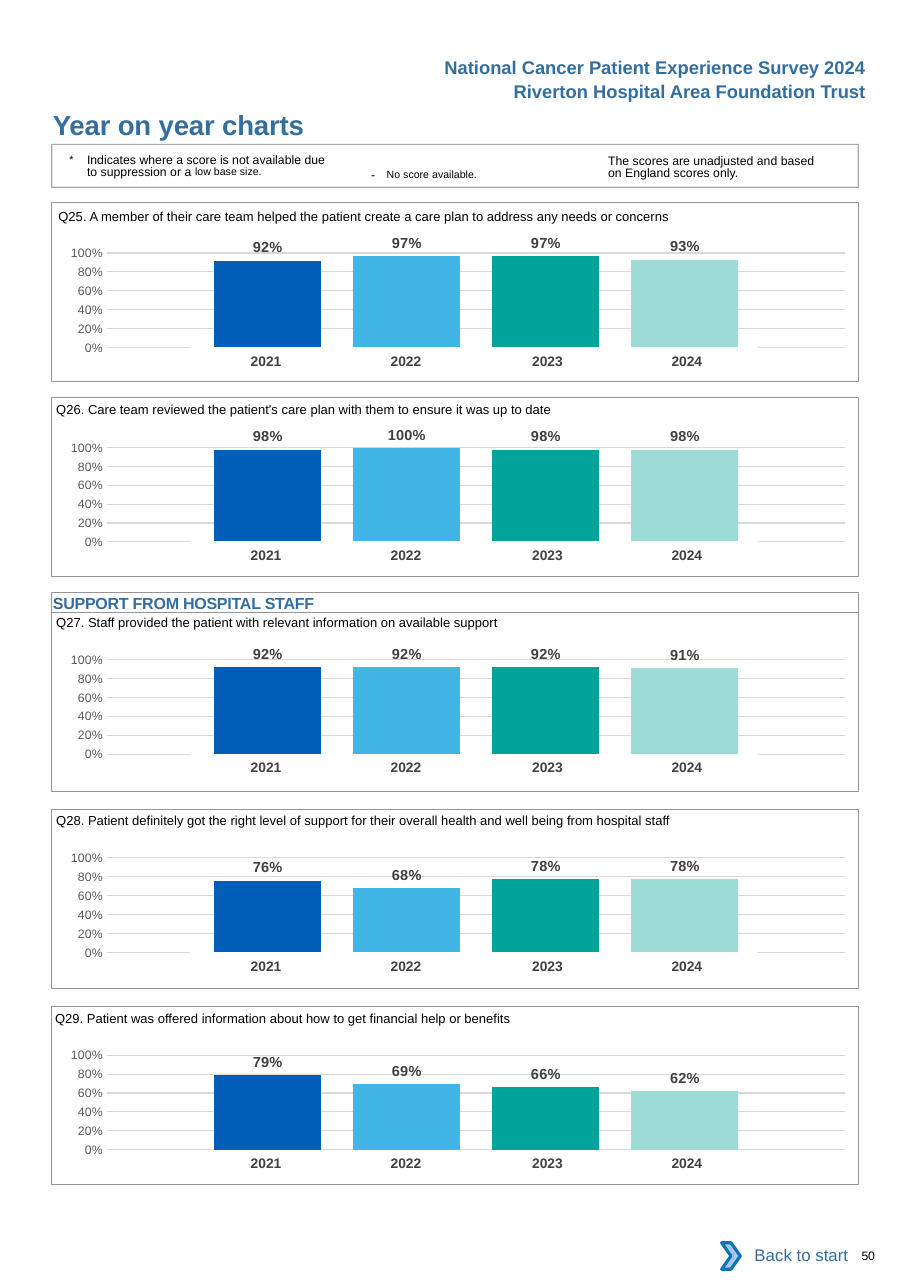
from pptx import Presentation
from pptx import util as u
from pptx.chart.data import CategoryChartData
from pptx.dml.color import RGBColor
from pptx.enum import chart as charts, shapes, text
from pptx.oxml import parse_xml
from pptx.oxml.ns import nsdecls, qn

PX = 9144  # 100 px to the inch
BLUE, GREY, BLACK = "336E9F", "939598", "000000"
LEFT, RIGHT = text.PP_ALIGN.LEFT, text.PP_ALIGN.RIGHT

YEARS = {"2021": "005EB8", "2022": "41B6E6", "2023": "00A499", "2024": "9CDCD7"}
YEAR_COLUMNS = [(127, 0), (127, 0), (134, 4), (127, 12)]  # width, right inset

# panel top, chart top, question left and top, question, scores
PANELS = [
    (184, 211, 53, 180, "Q25. A member of their care team helped the patient create a care plan "
     "to address any needs or concerns", (0.92, 0.97, 0.97, 0.93)),
    (361, 387, 51, 355, "Q26. Care team reviewed the patient's care plan with them to ensure "
     "it was up to date", (0.98, 1, 0.98, 0.98)),
    (556, 580, 51, 549, "Q27. Staff provided the patient with relevant information on available "
     "support", (0.92, 0.92, 0.92, 0.91)),
    (735, 760, 51, 728, "Q28. Patient definitely got the right level of support for their overall "
     "health and well being from hospital staff", (0.76, 0.68, 0.78, 0.78)),
    (913, 939, 50, 908, "Q29. Patient was offered information about how to get financial help "
     "or benefits", (0.79, 0.69, 0.66, 0.62)),
]
PANEL_LEFT, PANEL_WIDTH, PANEL_HEIGHT = 47, 732, 162
CHART_LEFT, CHART_HEIGHT = 39, 129
YEARS_LEFT, YEARS_DROP, YEARS_HEIGHT = 173, 105, 27

# box, text, size, bold, colour, alignment, letter spacing in 1/100 pt
LINES = [
    ((392, 51, 394, 20), "National Cancer Patient Experience Survey 2024", 12, True, BLUE, RIGHT, 0),
    ((448, 73, 338, 20), "Riverton Hospital Area Foundation Trust", 12, True, BLUE, RIGHT, 0),
    ((48, 98, 450, 30), "Year on year charts", 18, True, BLUE, LEFT, -10),
    ((48, 539, 731, 17), "SUPPORT FROM HOSPITAL STAFF", 10.5, True, BLUE, LEFT, -15),
    ((662, 1130, 108, 20), "Back to start", 11, False, BLUE, RIGHT, 0),
    ((782, 1133, 41, 13), "50", 8, False, BLACK, LEFT, -20),
]

# box, line spacing in pt, hanging indent, runs of (text, size, baseline in 1/1000 %, letter spacing)
NOTES = [
    ((63, 141, 238, 24), 8.1, 16, [
        ("*\t", 12, 3000, 0),
        ("Indicates where a score is not available due to suppression or a ", 8, 0, 0),
        ("low base size.", 12, 7000, 0)]),
    ((337, 146, 163, 19), None, 0, [
        ("- ", 8, 0, 260), ("No score available.", 12, 3000, 0)]),
    ((552, 141, 198, 24), 8.1, 0, [
        ("The scores are unadjusted and based on England scores only.", 8, 0, 0)]),
]


def px(*lengths):
    return [length * PX for length in lengths]


def rgb(colour):
    return RGBColor.from_string(colour)


def set_font(font, size, colour, bold=False):
    font.name, font.size, font.bold = "Arial", u.Pt(size), bold
    font.color.rgb = rgb(colour)


def add_text_frame(slide, box):
    frame = slide.shapes.add_textbox(*px(*box)).text_frame
    frame.word_wrap = True
    frame.margin_left = frame.margin_top = frame.margin_right = frame.margin_bottom = 0
    return frame


def add_run(paragraph, words, baseline=0, spacing=0):
    run = paragraph.add_run()
    run.text = words
    properties = run._r.get_or_add_rPr()
    if spacing:
        properties.set("spc", str(spacing))
    if baseline:
        properties.set("baseline", str(baseline))
    return run


def add_line(slide, box, words, size, bold=False, colour=BLACK, alignment=LEFT, spacing=0):
    paragraph = add_text_frame(slide, box).paragraphs[0]
    paragraph.alignment = alignment
    set_font(paragraph.font, size, colour, bold)
    add_run(paragraph, words, spacing=spacing)


def add_note(slide, box, line_spacing, hanging, runs):
    paragraph = add_text_frame(slide, box).paragraphs[0]
    if line_spacing:
        paragraph.line_spacing = u.Pt(line_spacing)
    if hanging:
        properties = paragraph._p.get_or_add_pPr()
        properties.set("marL", str(hanging * PX))
        properties.set("indent", str(-hanging * PX))
    for words, size, baseline, spacing in runs:
        set_font(add_run(paragraph, words, baseline, spacing).font, size, BLACK)


def add_outline(slide, box, kind=shapes.MSO_SHAPE.RECTANGLE, fill=None, line=GREY, width=0.5):
    shape = slide.shapes.add_shape(kind, *px(*box))
    shape.shadow.inherit = False
    if fill:
        shape.fill.solid()
        shape.fill.fore_color.rgb = rgb(fill)
    else:
        shape.fill.background()
    shape.line.color.rgb = rgb(line)
    shape.line.width = u.Pt(width)
    return shape


def add_score_chart(slide, top, scores):
    data = CategoryChartData(number_format="0%")
    data.categories = ["1"]
    for number, score in enumerate(scores, 1):
        data.add_series(f"Series {number}", [score])
    chart = slide.shapes.add_chart(charts.XL_CHART_TYPE.COLUMN_CLUSTERED,
                                   *px(CHART_LEFT, top, PANEL_WIDTH, CHART_HEIGHT), data).chart
    chart.has_legend = chart.has_title = False
    chart.font.name, chart.font.size = "Calibri", u.Pt(10)
    chart.category_axis.visible = False

    axis = chart.value_axis
    axis.minimum_scale, axis.maximum_scale, axis.major_unit = 0, 1, 0.2
    axis.major_tick_mark = axis.minor_tick_mark = charts.XL_TICK_MARK.NONE
    axis.format.line.fill.background()
    axis.major_gridlines.format.line.color.rgb = rgb("D9D9D9")
    axis.major_gridlines.format.line.width = u.Pt(0.75)
    axis.tick_labels.number_format, axis.tick_labels.number_format_is_linked = "0%", False
    set_font(axis.tick_labels.font, 8, "595959")

    plot = chart.plots[0]
    plot.gap_width, plot.overlap, plot.vary_by_categories = 200, -30, False
    for series, colour in zip(plot.series, YEARS.values()):
        series.format.fill.solid()
        series.format.fill.fore_color.rgb = rgb(colour)
        labels = series.data_labels
        labels.show_value = True
        labels.position = charts.XL_LABEL_POSITION.OUTSIDE_END
        labels.number_format, labels.number_format_is_linked = "0%", False
        set_font(labels.font, 9.5, "404040", True)
    place_plot(chart, x=0.08, y=0.145, w=0.915, h=0.666)


def place_plot(chart, **fractions):
    """Fix the inner plot area as fractions of the chart's size."""
    area = chart._chartSpace.chart.plotArea
    for layout in area.findall(qn("c:layout")):
        area.remove(layout)
    modes = '<c:layoutTarget val="inner"/><c:xMode val="edge"/><c:yMode val="edge"/>'
    sizes = "".join(f'<c:{name} val="{value}"/>' for name, value in fractions.items())
    area.insert(0, parse_xml(f'<c:layout {nsdecls("c")}><c:manualLayout>{modes}{sizes}'
                             '</c:manualLayout></c:layout>'))


def add_year_table(slide, top):
    width = sum(column for column, _ in YEAR_COLUMNS)
    table = slide.shapes.add_table(1, len(YEARS), *px(YEARS_LEFT, top, width, YEARS_HEIGHT)).table
    table.first_row = table.horz_banding = False
    for index, (year, (column, inset)) in enumerate(zip(YEARS, YEAR_COLUMNS)):
        table.columns[index].width = column * PX
        cell = table.cell(0, index)
        cell.fill.background()
        cell.margin_left, cell.margin_right = px(10, inset)
        cell.margin_top = cell.margin_bottom = 5 * PX
        cell.text = year
        paragraph = cell.text_frame.paragraphs[0]
        paragraph.alignment = text.PP_ALIGN.CENTER
        set_font(paragraph.font, 9, "414042", True)


def main():
    presentation = Presentation()
    presentation.slide_width, presentation.slide_height = px(826, 1169)
    slide = presentation.slides.add_slide(presentation.slide_layouts[6])

    for panel_top, chart_top, left, top, question, scores in PANELS:
        add_score_chart(slide, chart_top, scores)
        add_year_table(slide, chart_top + YEARS_DROP)
        add_outline(slide, (PANEL_LEFT, panel_top, PANEL_WIDTH, PANEL_HEIGHT))
        add_line(slide, (left, top + 9, PANEL_WIDTH - 10, 15), question, 8.5)

    add_outline(slide, (PANEL_LEFT, 538, PANEL_WIDTH, 18))
    notes_frame = add_outline(slide, (PANEL_LEFT, 131, PANEL_WIDTH, 39), width=0.75)
    line_colour = notes_frame._element.spPr.find(".//" + qn("a:srgbClr"))
    line_colour.append(parse_xml(f'<a:alpha {nsdecls("a")} val="80000"/>'))
    for note in NOTES:
        add_note(slide, *note)
    for line in LINES:
        add_line(slide, *line)
    add_outline(slide, (655, 1128, 17, 24), shapes.MSO_SHAPE.CHEVRON, "A8C7E9", "0A74BB", 2)

    presentation.save("out.pptx")


if __name__ == "__main__":
    main()
